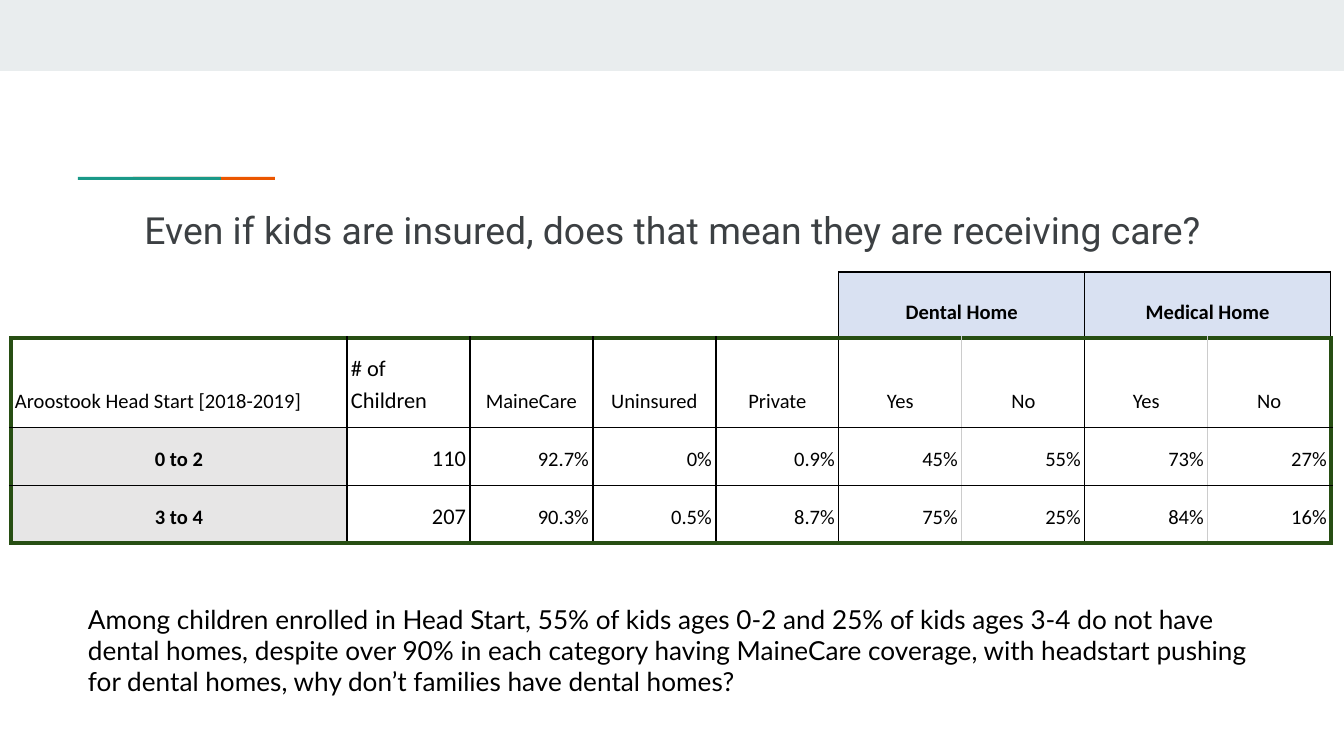
import pptx
import pptx.dml.color
import pptx.enum.shapes
import pptx.enum.text
import pptx.oxml
import pptx.oxml.ns
import pptx.util

SCALE = 914400 / 134.4
ALIGN = pptx.enum.text.PP_ALIGN
BLACK, GREEN, GREY = "000000", "274E13", "CCCCCC"
ROWS = [
    ["", "", "", "", "", "Dental Home", "", "Medical Home", ""],
    ["Aroostook Head Start [2018-2019]", "# of Children", "MaineCare",
     "Uninsured", "Private", "Yes", "No", "Yes", "No"],
    ["0 to 2", "110", "92.7%", "0%", "0.9%", "45%", "55%", "73%", "27%"],
    ["3 to 4", "207", "90.3%", "0.5%", "8.7%", "75%", "25%", "84%", "16%"],
]
COLUMN_WIDTHS = [336] + [123] * 8
ROW_HEIGHTS = [58, 89, 58, 58]


def px(length):
    """Turn pixels into EMU."""
    return pptx.util.Emu(round(length * SCALE))


def color(value):
    """Turn a hex string into a colour."""
    return pptx.dml.color.RGBColor.from_string(value)


def write(frame, text, size, font, fill=BLACK, bold=False, align=ALIGN.LEFT, spacing=1.0):
    """Write one formatted paragraph into a text frame."""
    paragraph = frame.paragraphs[0]
    paragraph.alignment = align
    paragraph.line_spacing = spacing
    run = paragraph.add_run()
    run.text = text
    run.font.size = pptx.util.Pt(size)
    run.font.name = font
    run.font.bold = bold
    run.font.color.rgb = color(fill)


def vertical_color(row, edge):
    """Give the colour of a vertical table rule, or None."""
    if row == 0:
        return BLACK if edge in (5, 7, 9) else None
    if edge in (0, 9):
        return GREEN
    return GREY if edge in (6, 8) else BLACK


def horizontal_color(edge, column):
    """Give the colour of a horizontal table rule, or None."""
    if edge == 0:
        return BLACK if column >= 5 else None
    return GREEN if edge in (1, 4) else BLACK


def set_border(cell, side, value):
    """Draw one side of a cell, green rules being the heavy ones."""
    width = pptx.util.Pt(2.25 if value == GREEN else 0.75)
    paint = f'<a:solidFill><a:srgbClr val="{value}"/></a:solidFill>' if value else "<a:noFill/>"
    namespace = pptx.oxml.ns.nsdecls("a")
    line = pptx.oxml.parse_xml(f'<a:ln{side} {namespace} w="{width}">{paint}</a:ln{side}>')
    cell._tc.get_or_add_tcPr().append(line)


def cell_format(row, column):
    """Give the text format for a table position."""
    if row == 0 or (row > 1 and column == 0):
        align = ALIGN.CENTER
    elif row == 1:
        align = ALIGN.LEFT if column < 2 else ALIGN.CENTER
    else:
        align = ALIGN.RIGHT
    return {
        "size": 12 if column == 1 else 11,
        "bold": row == 0 or (row > 1 and column == 0),
        "align": align,
    }


class SlideBuilder:
    """Holds the style and the current slide."""

    title_font, body_font, table_font = "Roboto", "Lato", "Calibri"
    header_fill, label_fill = "D9E1F2", "E7E6E6"

    def __init__(self, slide):
        """Keep the slide to draw on."""
        self.slide = slide

    def bar(self, left, top, width, height, fill):
        """Add a plain filled rectangle."""
        kind = pptx.enum.shapes.MSO_SHAPE.RECTANGLE
        shape = self.slide.shapes.add_shape(kind, px(left), px(top), px(width), px(height))
        shape.shadow.inherit = False
        shape.fill.solid()
        shape.fill.fore_color.rgb = color(fill)
        shape.line.fill.background()

    def text(self, left, top, width, height, text, **style):
        """Add a wrapping text box."""
        shape = self.slide.shapes.add_textbox(px(left), px(top), px(width), px(height))
        frame = shape.text_frame
        frame.word_wrap = True
        frame.margin_left = frame.margin_right = px(13)
        frame.margin_top = frame.margin_bottom = px(13)
        write(frame, text, **style)

    def table(self, left, top, rows, widths, heights):
        """Add the ruled table with its two merged headings."""
        shape = self.slide.shapes.add_table(
            len(rows), len(widths), px(left), px(top), px(sum(widths)), px(sum(heights)))
        table = shape.table
        table.first_row = table.horz_banding = False
        for column, width in zip(table.columns, widths):
            column.width = px(width)
        for row, height in zip(table.rows, heights):
            row.height = px(height)
        for start in (5, 7):
            table.cell(0, start).merge(table.cell(0, start + 1))
        for row, texts in enumerate(rows):
            for column, text in enumerate(texts):
                self.cell(table.cell(row, column), row, column, text)

    def cell(self, cell, row, column, text):
        """Rule, fill and write one table cell."""
        right = column + (cell.span_width if cell.is_merge_origin else 1)
        set_border(cell, "L", vertical_color(row, column))
        set_border(cell, "R", vertical_color(row, right))
        set_border(cell, "T", horizontal_color(row, column))
        set_border(cell, "B", horizontal_color(row + 1, column))
        if row == 0 and column >= 5:
            fill = self.header_fill
        else:
            fill = self.label_fill if row > 1 and column == 0 else None
        if fill:
            cell.fill.solid()
            cell.fill.fore_color.rgb = color(fill)
        else:
            cell.fill.background()
        cell.vertical_anchor = pptx.enum.text.MSO_ANCHOR.BOTTOM
        cell.margin_left = cell.margin_right = px(4)
        cell.margin_top = cell.margin_bottom = px(13)
        if text:
            write(cell.text_frame, text, font=self.table_font, spacing=1.15,
                  **cell_format(row, column))


def main():
    """Build and save the slide."""
    presentation = pptx.Presentation()
    presentation.slide_width, presentation.slide_height = px(1344), px(756)
    builder = SlideBuilder(presentation.slides.add_slide(presentation.slide_layouts[6]))
    builder.bar(0, 0, 1344, 71, "E9EDEE")
    builder.bar(133, 177, 142, 3, "EB5600")
    builder.bar(78, 177, 143, 3, "1A9988")
    builder.text(
        108, 194, 1130, 79, "Even if kids are insured, does that mean they are receiving care?",
        size=20, font=builder.title_font, fill="3C4043", align=ALIGN.CENTER)
    builder.text(
        75, 590, 1192, 122,
        "Among children enrolled in Head Start, 55% of kids ages 0-2 and 25% of kids ages 3-4 "
        "do not have dental homes, despite over 90% in each category having MaineCare coverage, "
        "with headstart pushing for dental homes, why don’t families have dental homes?",
        size=14, font=builder.body_font)
    builder.table(11, 272, ROWS, COLUMN_WIDTHS, ROW_HEIGHTS)
    presentation.save("out.pptx")


if __name__ == "__main__":
    main()
